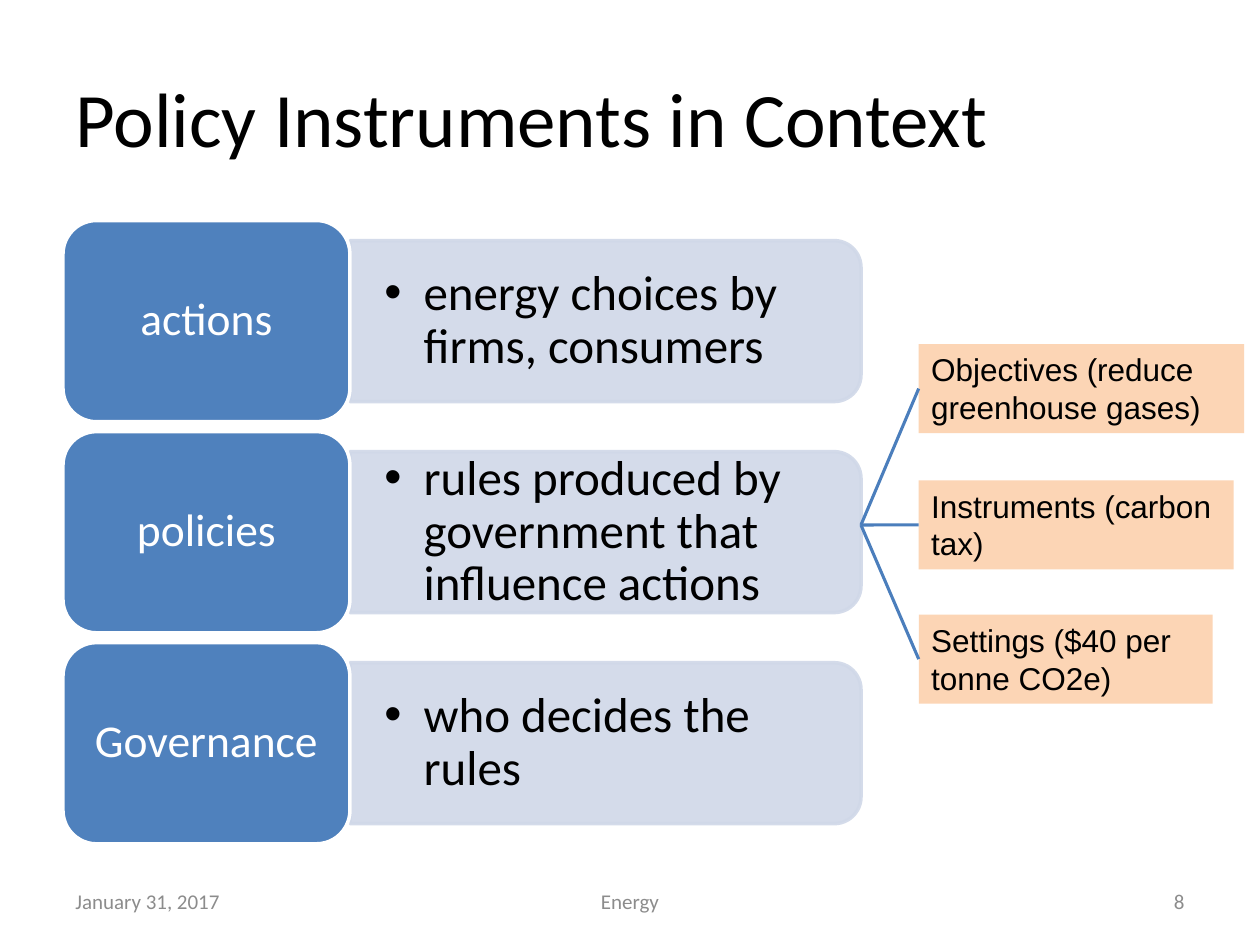
from lxml.etree import SubElement
from pptx import Presentation
from pptx.dml.color import RGBColor
from pptx.enum.shapes import MSO_CONNECTOR as LINE, MSO_SHAPE as SHAPE
from pptx.enum.text import MSO_ANCHOR as ANCHOR, PP_ALIGN as ALIGN
from pptx.oxml.ns import qn
from pptx.util import Pt


def rgb(value):
    return RGBColor.from_string(value)


def write(box, text, size, color, font="Calibri", align=ALIGN.LEFT,
          anchor=ANCHOR.MIDDLE, insets=(7.2, 3.6)):
    """Fill the box with one paragraph and return that paragraph."""
    frame = box.text_frame
    frame.word_wrap = True
    frame.vertical_anchor = anchor
    frame.margin_left = frame.margin_right = Pt(insets[0])
    frame.margin_top = frame.margin_bottom = Pt(insets[1])
    paragraph = frame.paragraphs[0]
    paragraph.alignment = align
    run = paragraph.add_run()
    run.text = text
    run.font.name = font
    run.font.size = Pt(size)
    run.font.color.rgb = rgb(color)
    return paragraph


deck = Presentation()
deck.slide_width, deck.slide_height = Pt(720), Pt(540)
slide = deck.slides.add_slide(deck.slide_layouts[6])
shapes = slide.shapes

title = shapes.add_textbox(Pt(36), Pt(21.6), Pt(648), Pt(90))
write(title, "Policy Instruments in Context", 44, "000000")

levels = [
    ("actions", "energy choices by firms, consumers"),
    ("policies", "rules produced by government that influence actions"),
    ("Governance", "who decides the rules"),
]
LABEL_LEFT, LABEL_WIDTH, LABEL_HEIGHT = 36, 164, 115
BAR_LEFT, BAR_WIDTH, BAR_HEIGHT = 200, 292, 92
FIRST_MIDDLE, PITCH = 183.5, 120.6

for row, (level, meaning) in enumerate(levels):
    middle = FIRST_MIDDLE + row * PITCH

    # Turned a quarter so that the two round corners face right
    bar = shapes.add_shape(
        SHAPE.ROUND_2_SAME_RECTANGLE,
        Pt(BAR_LEFT + (BAR_WIDTH - BAR_HEIGHT) / 2), Pt(middle - BAR_WIDTH / 2),
        Pt(BAR_HEIGHT), Pt(BAR_WIDTH))
    bar.rotation = 90
    bar.shadow.inherit = False
    bar.fill.solid()
    bar.fill.fore_color.rgb = rgb("D0D8E8")
    bar.line.color.rgb = rgb("D0D8E8")
    bar.line.width = Pt(2)
    for tint in bar._element.spPr.iter(qn("a:srgbClr")):
        SubElement(tint, qn("a:alpha"), val="90000")

    meaning_box = shapes.add_textbox(Pt(BAR_LEFT), Pt(middle - 41.5), Pt(287.5), Pt(83))
    bullet = write(meaning_box, meaning, 28, "000000", insets=(19.6, 9.8))
    bullet.line_spacing = 0.9
    properties = bullet._p.get_or_add_pPr()
    properties.set("marL", str(Pt(22.5)))
    properties.set("indent", str(-Pt(22.5)))
    SubElement(properties, qn("a:buFont"), typeface="Arial")
    SubElement(properties, qn("a:buChar"), char="•")

    label = shapes.add_shape(
        SHAPE.ROUNDED_RECTANGLE, Pt(LABEL_LEFT), Pt(middle - LABEL_HEIGHT / 2),
        Pt(LABEL_WIDTH), Pt(LABEL_HEIGHT))
    label.shadow.inherit = False
    label.fill.solid()
    label.fill.fore_color.rgb = rgb("4F81BD")
    label.line.color.rgb = rgb("FFFFFF")
    label.line.width = Pt(2)
    write(label, level, 26, "FFFFFF", align=ALIGN.CENTER, insets=(8, 3.6)).line_spacing = 0.9

footers = [
    (36, 168, "January 31, 2017", ALIGN.LEFT),
    (246, 228, "Energy", ALIGN.CENTER),
    (516, 168, "8", ALIGN.RIGHT),
]
for left, width, text, align in footers:
    footer = shapes.add_textbox(Pt(left), Pt(500.5), Pt(width), Pt(28.75))
    write(footer, text, 12, "8C8C8C", align=align)

policy_parts = [
    (196.6, 186, "Objectives (reduce greenhouse gases)"),
    (274.5, 180, "Instruments (carbon tax)"),
    (351.2, 168, "Settings ($40 per tonne CO2e)"),
]
for top, width, text in policy_parts:
    part = shapes.add_shape(SHAPE.RECTANGLE, Pt(525), Pt(top), Pt(width), Pt(50.9))
    part.shadow.inherit = False
    part.fill.solid()
    part.fill.fore_color.rgb = rgb("FCD5B5")
    part.line.fill.background()
    write(part, text, 18, "000000", font="Arial", anchor=ANCHOR.TOP)

    branch = shapes.add_connector(LINE.STRAIGHT, Pt(492), Pt(300), Pt(525), Pt(top))
    branch.end_connect(part, 1)
    branch.line.color.rgb = rgb("4B7EBC")
    branch.line.width = Pt(1.75)
    SubElement(branch._element.spPr, qn("a:effectLst"))

deck.save("out.pptx")
